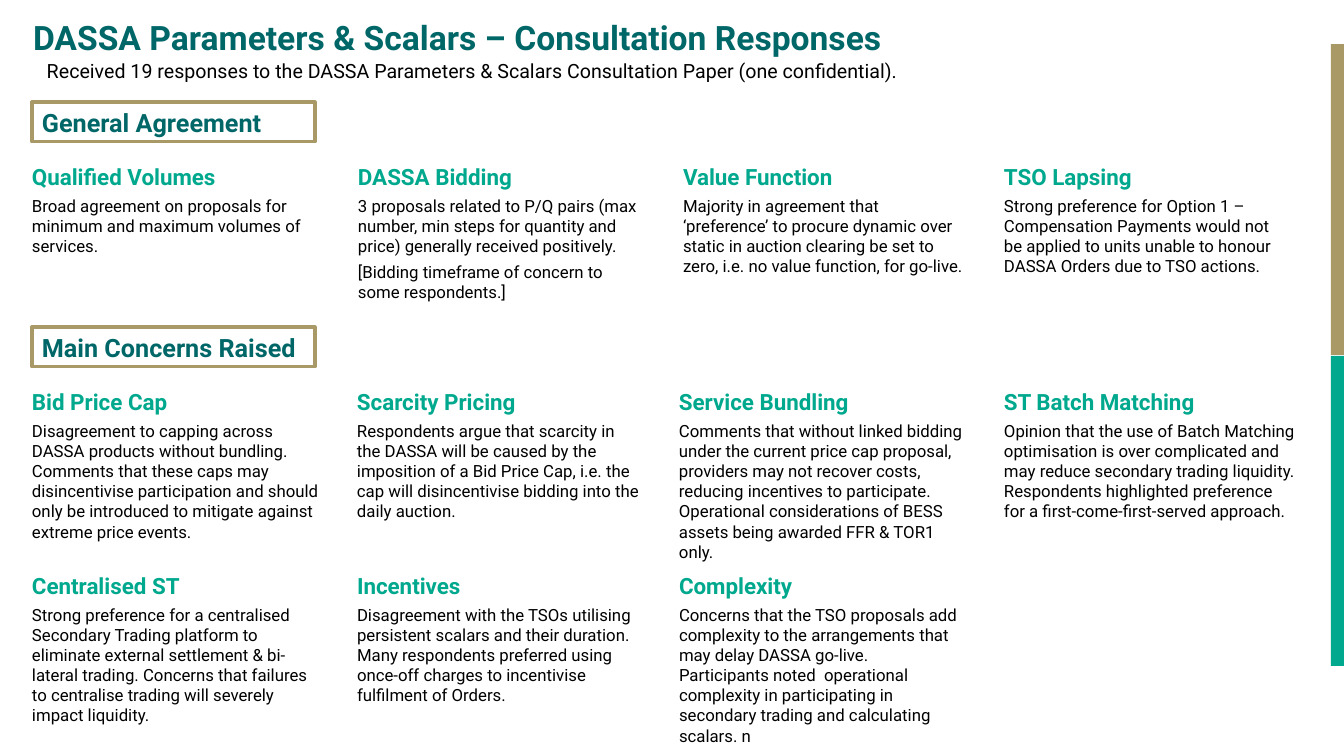
from pptx import Presentation
from pptx.dml.color import RGBColor
from pptx.enum.shapes import MSO_SHAPE
from pptx.enum.text import MSO_ANCHOR, MSO_AUTO_SIZE, PP_ALIGN
from pptx.util import Pt

RECT = MSO_SHAPE.RECTANGLE
TOP = MSO_ANCHOR.TOP
LEFT = PP_ALIGN.LEFT
NO_FIT = MSO_AUTO_SIZE.NONE
GROW = MSO_AUTO_SIZE.SHAPE_TO_FIT_TEXT

TEAL = RGBColor(0x00, 0x67, 0x68)
GREEN = RGBColor(0x00, 0xA8, 0x8E)
GOLD = RGBColor(0xA9, 0x99, 0x66)
BLACK = RGBColor(0x00, 0x00, 0x00)

TITLE = {"size": Pt(24), "bold": True, "color": TEAL}
INTRO = {"size": Pt(14), "bold": False, "color": BLACK}
LABEL = {"size": Pt(18), "bold": True, "color": TEAL}
HEADING = {"size": Pt(16), "bold": True, "color": GREEN}
BODY = {"size": Pt(12), "bold": False, "color": BLACK}

SCALE = 12192000 / 1344


def px(*lengths):
    return [round(n * SCALE) for n in lengths]


def write(tf, lines, inset=None, fit=GROW):
    tf.word_wrap = True
    tf.auto_size = fit
    tf.vertical_anchor = TOP
    if inset is not None:
        tf.margin_left = tf.margin_right = tf.margin_top = tf.margin_bottom = inset
    for i, (text, style) in enumerate(lines):
        p = tf.add_paragraph() if i else tf.paragraphs[0]
        p.alignment = LEFT
        p.space_before = Pt(4 if i else 0)
        r = p.add_run()
        r.text = text
        r.font.name = "Roboto"
        for key, value in style.items():
            if key == "color":
                r.font.color.rgb = value
            else:
                setattr(r.font, key, value)


prs = Presentation()
prs.slide_width, prs.slide_height = px(1344, 756)
s = prs.slides.add_slide(prs.slide_layouts[5])

for y, height, color in [(356, 310, GREEN), (44, 311, GOLD)]:
    sp = s.shapes.add_shape(RECT, *px(1331, y, 13, height))
    sp.shadow.inherit = False
    sp.fill.solid()
    sp.fill.fore_color.rgb = color
    sp.line.fill.background()

title = s.shapes.title
title.left, title.top, title.width, title.height = px(33, 21, 1222, 65)
write(title.text_frame,
      [("DASSA Parameters & Scalars – Consultation Responses", TITLE)], 0, NO_FIT)
title.text_frame.paragraphs[0].line_spacing = 0.9

intro = s.shapes.add_textbox(*px(32, 54, 935, 34))
write(intro.text_frame,
      [(" Received 19 responses to the DASSA Parameters & Scalars Consultation Paper (one confidential).", INTRO)])

for y, text in [(102, "General Agreement"), (327, "Main Concerns Raised")]:
    sp = s.shapes.add_shape(RECT, *px(32, y, 283, 40))
    sp.shadow.inherit = False
    sp.fill.background()
    sp.line.color.rgb = GOLD
    sp.line.width = Pt(2.25)
    write(sp.text_frame, [(text, LABEL)])

rows = [
    (163, [
        (32, 289, 94, "Qualified Volumes",
         ["Broad agreement on proposals for minimum and maximum volumes of services."]),
        (358, 289, 140, "DASSA Bidding",
         ["3 proposals related to P/Q pairs (max number, min steps for quantity and price) generally received positively.",
          "[Bidding timeframe of concern to some respondents.]"]),
        (683, 283, 135, "Value Function",
         ["Majority in agreement that ‘preference’ to procure dynamic over static in auction clearing be set to zero, i.e. no value function, for go-live."]),
        (1004, 283, 114, "TSO Lapsing",
         ["Strong preference for Option 1 – Compensation Payments would not be applied to units unable to honour DASSA Orders due to TSO actions."]),
    ]),
    (388, [
        (32, 289, 155, "Bid Price Cap",
         ["Disagreement to capping across DASSA products without bundling. Comments that these caps may disincentivise participation and should only be introduced to mitigate against extreme price events."]),
        (357, 285, 135, "Scarcity Pricing",
         ["Respondents argue that scarcity in the DASSA will be caused by the imposition of a Bid Price Cap, i.e. the cap will disincentivise bidding into the daily auction."]),
        (679, 289, 175, "Service Bundling",
         ["Comments that without linked bidding under the current price cap proposal, providers may not recover costs, reducing incentives to participate. Operational considerations of BESS assets being awarded FFR & TOR1 only."]),
        (1004, 291, 155, "ST Batch Matching",
         ["Opinion that the use of Batch Matching optimisation is over complicated and may reduce secondary trading liquidity. Respondents highlighted preference for a first-come-first-served approach."]),
    ]),
    (572, [
        (32, 283, 155, "Centralised ST",
         ["Strong preference for a centralised Secondary Trading platform to eliminate external settlement & bi-lateral trading. Concerns that failures to centralise trading will severely impact liquidity."]),
        (357, 283, 135, "Incentives",
         ["Disagreement with the TSOs utilising persistent scalars and their duration. Many respondents preferred using once-off charges to incentivise fulfilment of Orders."]),
        (679, 283, 155, "Complexity",
         ["Concerns that the TSO proposals add complexity to the arrangements that may delay DASSA go-live. Participants noted  operational complexity in participating in secondary trading and calculating scalars. n"]),
    ]),
]
for y, topics in rows:
    for x, width, height, heading, body in topics:
        tb = s.shapes.add_textbox(*px(x, y, width, height))
        write(tb.text_frame, [(heading, HEADING)] + [(text, BODY) for text in body], 0)

prs.save("out.pptx")
